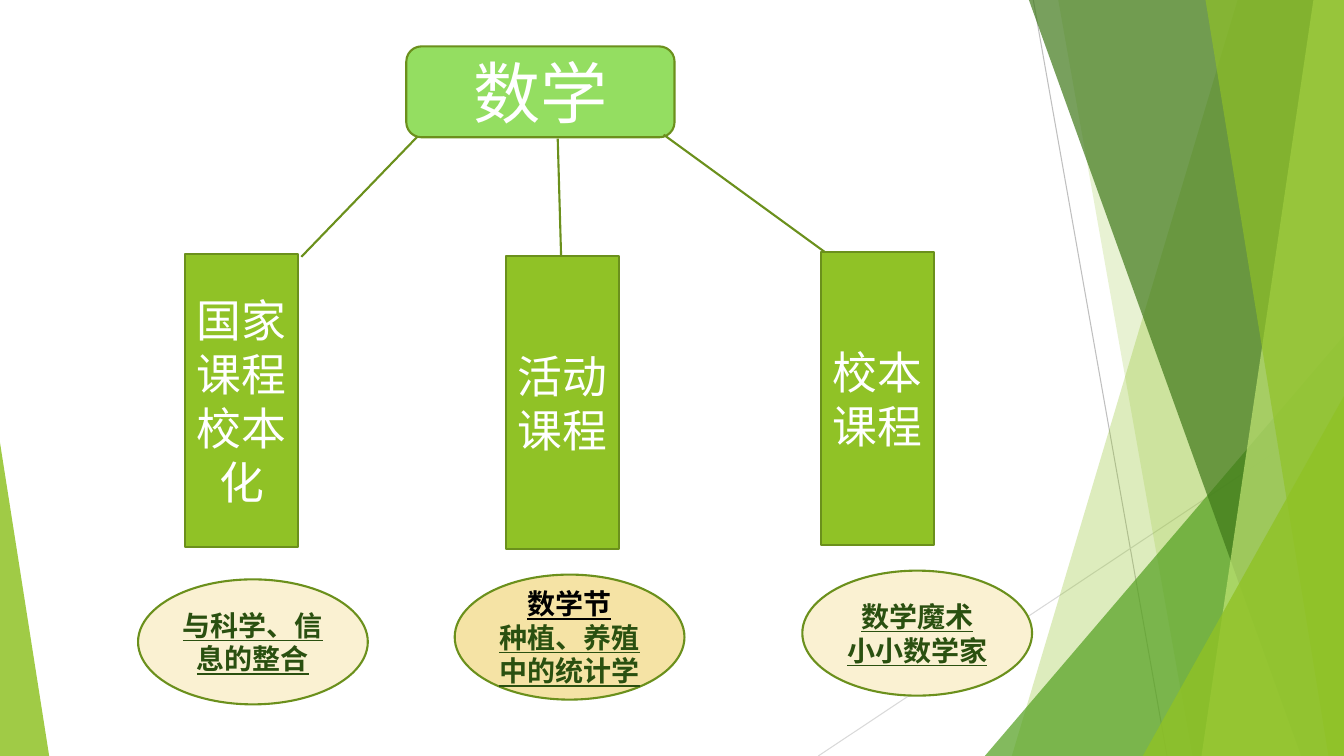
from lxml.etree import SubElement
from pptx import Presentation
from pptx.dml.color import RGBColor
from pptx.enum.shapes import MSO_CONNECTOR, MSO_SHAPE
from pptx.enum.text import MSO_ANCHOR, PP_ALIGN
from pptx.oxml.ns import qn
from pptx.util import Cm, Pt

WIDTH, HEIGHT = 33.87, 19.05
FONT = "Lato"
COLORS = {
    "green": "90C226", "leaf": "54A021", "forest": "3F7819", "lime": "C0E474",
    "outline": "6B901C", "subject": "94DE61", "cream": "FAF1D2", "sand": "F5E3A5",
    "gray": "BFBFBF", "light gray": "D9D9D9",
    "white": "FFFFFF", "black": "000000", "dark green": "2A5010",
}


def color(name):
    """Return the named colour."""
    return RGBColor.from_string(COLORS[name])


def paint(shape, fill, opacity=None, outline=None):
    """Fill a shape, with optional opacity in percent and outline."""
    shape.shadow.inherit = False
    shape.fill.solid()
    shape.fill.fore_color.rgb = color(fill)
    if opacity:
        fill_color = shape._element.spPr.find(f".//{qn('a:srgbClr')}")
        SubElement(fill_color, qn("a:alpha"), val=str(opacity * 1000))
    if outline:
        shape.line.color.rgb = color(outline)
        shape.line.width = Pt(1.5)
    else:
        shape.line.fill.background()


def add_hairline(slide, begin, end, line_color):
    """Draw a thin decorative line."""
    line = slide.shapes.add_connector(
        MSO_CONNECTOR.STRAIGHT, *[Cm(value) for value in begin + end])
    line.line.color.rgb = color(line_color)
    line.line.width = Pt(0.75)
    SubElement(line._element.spPr, qn("a:effectLst"))


def add_band(slide, top_left, bottom_left, fill, opacity):
    """Draw a full-height band that reaches the right edge of the slide."""
    builder = slide.shapes.build_freeform(Cm(top_left), 0)
    corners = [(WIDTH, 0), (WIDTH, HEIGHT), (bottom_left, HEIGHT)]
    builder.add_line_segments([(Cm(x), Cm(y)) for x, y in corners])
    paint(builder.convert_to_shape(), fill, opacity)


def add_corner(slide, left, width, height, apex, fill, opacity):
    """Draw a right triangle that stands on the bottom edge of the slide."""
    triangle = slide.shapes.add_shape(
        MSO_SHAPE.ISOSCELES_TRIANGLE,
        Cm(left), Cm(HEIGHT - height), Cm(width), Cm(height))
    triangle.adjustments[0] = apex
    paint(triangle, fill, opacity)


def add_backdrop(slide):
    """Draw the green facets at the sides of the slide."""
    add_hairline(slide, (26.04, 0), (29.41, HEIGHT), "gray")
    add_hairline(slide, (WIDTH, 10.24), (20.62, HEIGHT), "light gray")
    add_band(slide, 31.19, 25.5, "green", 30)
    add_band(slide, 26.67, 30.05, "green", 20)
    add_corner(slide, 24.82, 9.05, 10.59, 1, "leaf", 72)
    add_band(slide, 25.93, 32.79, "forest", 70)
    add_band(slide, 33.1, 30.28, "lime", 70)
    add_band(slide, 30.38, 33.48, "green", 65)
    add_corner(slide, 28.8, 5.07, 9.07, 1, "green", 80)
    add_corner(slide, 0, 1.24, 7.9, 0, "green", 85)


def add_label(slide, kind, box, text, fill, size, text_colors, emphasis=False):
    """Draw an outlined shape with centred text, one colour per paragraph."""
    shape = slide.shapes.add_shape(kind, *[Cm(value) for value in box])
    paint(shape, fill, outline="outline")
    text_frame = shape.text_frame
    text_frame.word_wrap = True
    text_frame.vertical_anchor = MSO_ANCHOR.MIDDLE
    text_frame.text = text
    for paragraph, text_color in zip(text_frame.paragraphs, text_colors):
        paragraph.alignment = PP_ALIGN.CENTER
        for run in paragraph.runs:
            run.font.name = FONT
            run.font.size = Pt(size)
            run.font.color.rgb = color(text_color)
            if emphasis:
                run.font.bold = True
                run.font.underline = True
    return shape


def add_course(slide, left, top, text, pointer):
    """Draw a course box whose callout line leads up to the subject."""
    course = add_label(slide, MSO_SHAPE.LINE_CALLOUT_1, (left, top, 2.84, 7.39),
                       text, "green", 32, ["white"])
    for index, value in enumerate(pointer):
        course.adjustments[index] = value


def add_example(slide, left, top, text, fill, text_colors):
    """Draw an ellipse with the examples of a course."""
    add_label(slide, MSO_SHAPE.OVAL, (left, top, 5.79, 3.15),
              text, fill, 20, text_colors, emphasis=True)


def add_course_tree(slide):
    """Draw the subject, its three courses and their examples."""
    add_label(slide, MSO_SHAPE.FLOWCHART_ALTERNATE_PROCESS,
              (10.24, 1.17, 6.76, 2.29), "数学", "subject", 48, ["white"])
    add_course(slide, 4.67, 6.4, "国家课程校本化", (-0.4, 2.06, 0.01, 1.03))
    add_course(slide, 12.75, 6.45, "活动课程", (-0.4, 0.46, 0, 0.49))
    add_course(slide, 20.7, 6.35, "校本课程", (-0.4, -1.4, 0, 0.03))
    add_example(slide, 3.48, 14.6, "与科学、信息的整合", "cream", ["dark green"])
    add_example(slide, 11.46, 14.48, "数学节\n种植、养殖中的统计学",
                "sand", ["black", "dark green"])
    add_example(slide, 20.22, 14.38, "数学魔术\n小小数学家",
                "cream", ["dark green", "dark green"])


def main():
    """Build and save the presentation."""
    presentation = Presentation()
    presentation.slide_width = Cm(WIDTH)
    presentation.slide_height = Cm(HEIGHT)
    slide = presentation.slides.add_slide(presentation.slide_layouts[6])
    add_backdrop(slide)
    add_course_tree(slide)
    presentation.save("out.pptx")


if __name__ == "__main__":
    main()
